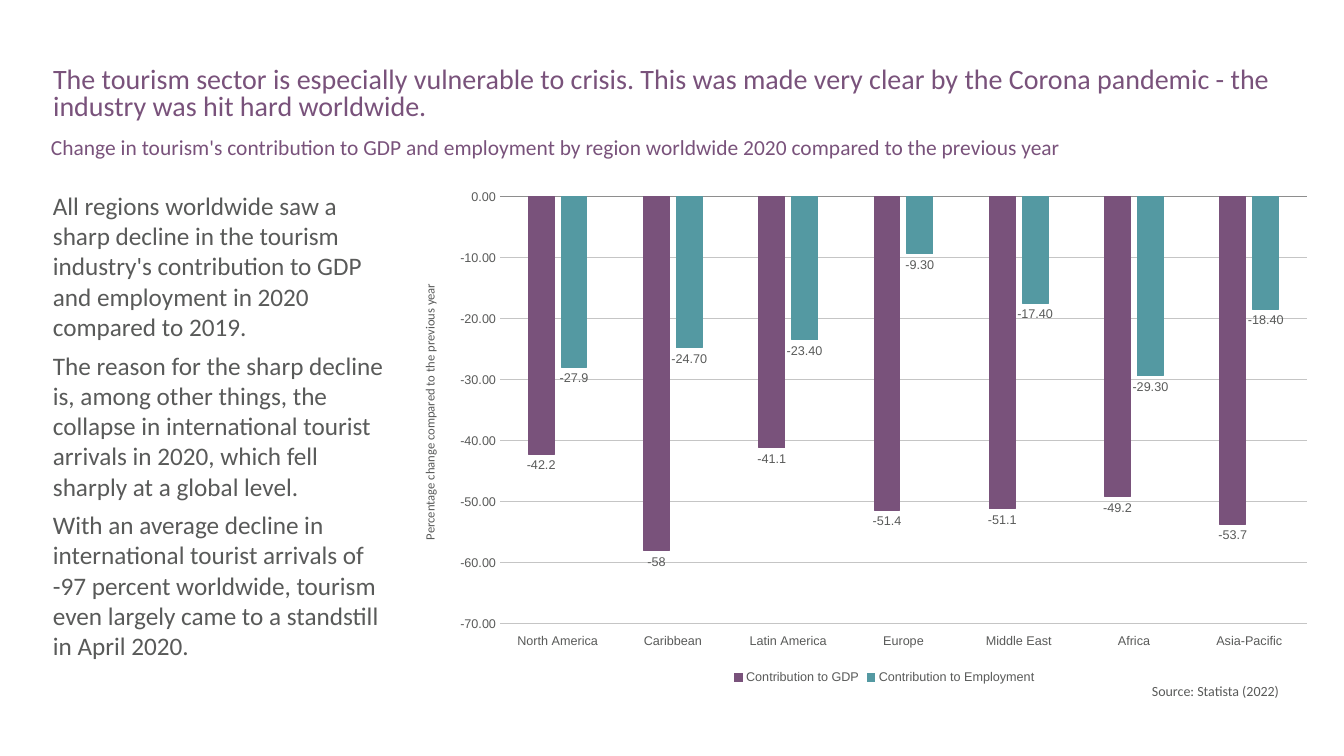
"""Build a slide on how the 2020 crisis cut tourism's share of GDP and employment."""
from lxml.etree import SubElement
from pptx import Presentation
from pptx.chart.data import CategoryChartData
from pptx.dml.color import RGBColor
from pptx.enum.chart import XL_CHART_TYPE, XL_LABEL_POSITION, XL_LEGEND_POSITION, XL_TICK_LABEL_POSITION, XL_TICK_MARK
from pptx.enum.text import MSO_ANCHOR, MSO_AUTO_SIZE, PP_ALIGN
from pptx.oxml import parse_xml
from pptx.oxml.ns import nsdecls, qn
from pptx.util import Pt

TITLE = ("The tourism sector is especially vulnerable to crisis. This was made very clear "
         "by the Corona pandemic - the industry was hit hard worldwide.")
SUBTITLE = ("Change in tourism's contribution to GDP and employment by region worldwide 2020 "
            "compared to the previous year")
FINDINGS = [
    "All regions worldwide saw a sharp decline in the tourism industry's contribution to GDP "
    "and employment in 2020 compared to 2019.",
    "The reason for the sharp decline is, among other things, the collapse in international "
    "tourist arrivals in 2020, which fell sharply at a global level.",
    "With an average decline in international tourist arrivals of -97 percent worldwide, "
    "tourism even largely came to a standstill in April 2020.",
]
SOURCE = "Source: Statista (2022)"
AXIS_CAPTION = "Percentage change compared to the previous year"
REGIONS = ["North America", "Caribbean", "Latin America", "Europe", "Middle East", "Africa", "Asia-Pacific"]
CHANGES = [
    ("Contribution to GDP", [-42.2, -58, -41.1, -51.4, -51.1, -49.2, -53.7], "purple", "General"),
    ("Contribution to Employment", [-27.9, -24.7, -23.4, -9.3, -17.4, -29.3, -18.4], "teal", "#,##0.00"),
]
COLORS = {"purple": "79527B", "teal": "5499A2", "text": "595A59", "axis": "8E8E8E", "grid": "C5C5C5"}

PX = 914400 / 100.8
CHART_BOX = (443, 180, 883, 509)
PLOT_BOX = (500, 197, 807, 427)


def emu(*lengths):
    return [round(length * PX) for length in lengths]


def color(name):
    return RGBColor.from_string(COLORS[name])


def style_font(font, size, name, tint):
    font.size, font.name, font.bold = Pt(size), name, False
    font.color.rgb = color(tint)


def write(shape, paragraphs, size, tint, spacing=None, anchor=MSO_ANCHOR.TOP):
    frame = shape.text_frame
    frame.word_wrap = True
    frame.auto_size = MSO_AUTO_SIZE.NONE
    frame.vertical_anchor = anchor
    for index, text in enumerate(paragraphs):
        paragraph = frame.add_paragraph() if index else frame.paragraphs[0]
        paragraph.alignment = PP_ALIGN.LEFT
        if spacing:
            paragraph.line_spacing = spacing
        if index:
            paragraph.space_before = Pt(6)
        run = paragraph.add_run()
        run.text = text
        style_font(run.font, size, "Calibri", tint)


def add_text(slide, box, *args, **options):
    shape = slide.shapes.add_textbox(*emu(*box))
    write(shape, *args, **options)
    return shape


def set_line(line, tint):
    line.color.rgb = color(tint)
    line.width = Pt(0.75)


def style_axes(chart):
    regions, percent = chart.category_axis, chart.value_axis
    for axis in (regions, percent):
        axis.major_tick_mark = axis.minor_tick_mark = XL_TICK_MARK.NONE
        style_font(axis.tick_labels.font, 9, "Arial", "text")
    regions.tick_label_position = XL_TICK_LABEL_POSITION.LOW
    set_line(regions.format.line, "axis")
    percent.minimum_scale, percent.maximum_scale, percent.major_unit = -70, 0, 10
    percent.tick_labels.number_format = "0.00"
    percent.tick_labels.number_format_is_linked = False
    percent.format.line.fill.background()
    set_line(percent.major_gridlines.format.line, "grid")


def place_plot(chart):
    plot_area = chart.element.find(".//" + qn("c:plotArea"))
    for old in plot_area.findall(qn("c:layout")):
        plot_area.remove(old)
    layout = parse_xml(f'<c:layout {nsdecls("c")}/>')
    manual = SubElement(layout, qn("c:manualLayout"))
    left, top, width, height = CHART_BOX
    x, y, w, h = PLOT_BOX
    settings = [("layoutTarget", "inner"), ("xMode", "edge"), ("yMode", "edge"),
                ("x", (x - left) / width), ("y", (y - top) / height),
                ("w", w / width), ("h", h / height)]
    for tag, value in settings:
        SubElement(manual, qn("c:" + tag)).set("val", str(value))
    plot_area.insert(0, layout)


def add_change_chart(slide):
    data = CategoryChartData()
    data.categories = REGIONS
    for name, values, *_ in CHANGES:
        data.add_series(name, values)
    chart = slide.shapes.add_chart(XL_CHART_TYPE.COLUMN_CLUSTERED, *emu(*CHART_BOX), data).chart
    style_font(chart.font, 10, "Arial", "text")
    chart.has_title = False
    chart.has_legend = True
    chart.legend.position = XL_LEGEND_POSITION.BOTTOM
    chart.legend.include_in_layout = False
    style_font(chart.legend.font, 9, "Arial", "text")
    plot = chart.plots[0]
    plot.gap_width, plot.overlap, plot.vary_by_categories = 219, -27, False
    for series, (_, _, tint, number_format) in zip(plot.series, CHANGES):
        series.invert_if_negative = False
        series.format.fill.solid()
        series.format.fill.fore_color.rgb = color(tint)
        set_line(series.format.line, tint)
        labels = series.data_labels
        labels.show_value = True
        labels.position = XL_LABEL_POSITION.OUTSIDE_END
        labels.number_format = number_format
        labels.number_format_is_linked = False
        style_font(labels.font, 9, "Arial", "text")

    north_america = plot.series[1].points[0].data_label
    style_font(north_america.font, 9, "Arial", "text")
    north_america.position = XL_LABEL_POSITION.OUTSIDE_END
    label_index = chart.element.find(f".//{qn('c:dLbl')}/{qn('c:idx')}")
    label_index.addnext(parse_xml(f'<c:numFmt {nsdecls("c")} formatCode="General" sourceLinked="0"/>'))
    style_axes(chart)
    place_plot(chart)


def main():
    deck = Presentation()
    deck.slide_width, deck.slide_height = emu(1344, 756)
    slide = deck.slides.add_slide(deck.slide_layouts[5])
    title = slide.shapes.title
    title.left, title.top, title.width, title.height = emu(43, 63, 1264, 65)
    write(title, [TITLE], 20, "purple", spacing=0.8)
    add_text(slide, (41, 136, 1266, 28), [SUBTITLE], 15.3, "purple", spacing=0.7)
    add_text(slide, (43, 180, 352, 491), FINDINGS, 18, "text", anchor=MSO_ANCHOR.MIDDLE)
    add_change_chart(slide)
    add_text(slide, (1142, 678, 190, 27), [SOURCE], 10, "text")
    caption = add_text(slide, (257, 365, 345, 25), [AXIS_CAPTION], 9, "text")
    caption.rotation = 270
    deck.save("out.pptx")


if __name__ == "__main__":
    main()
